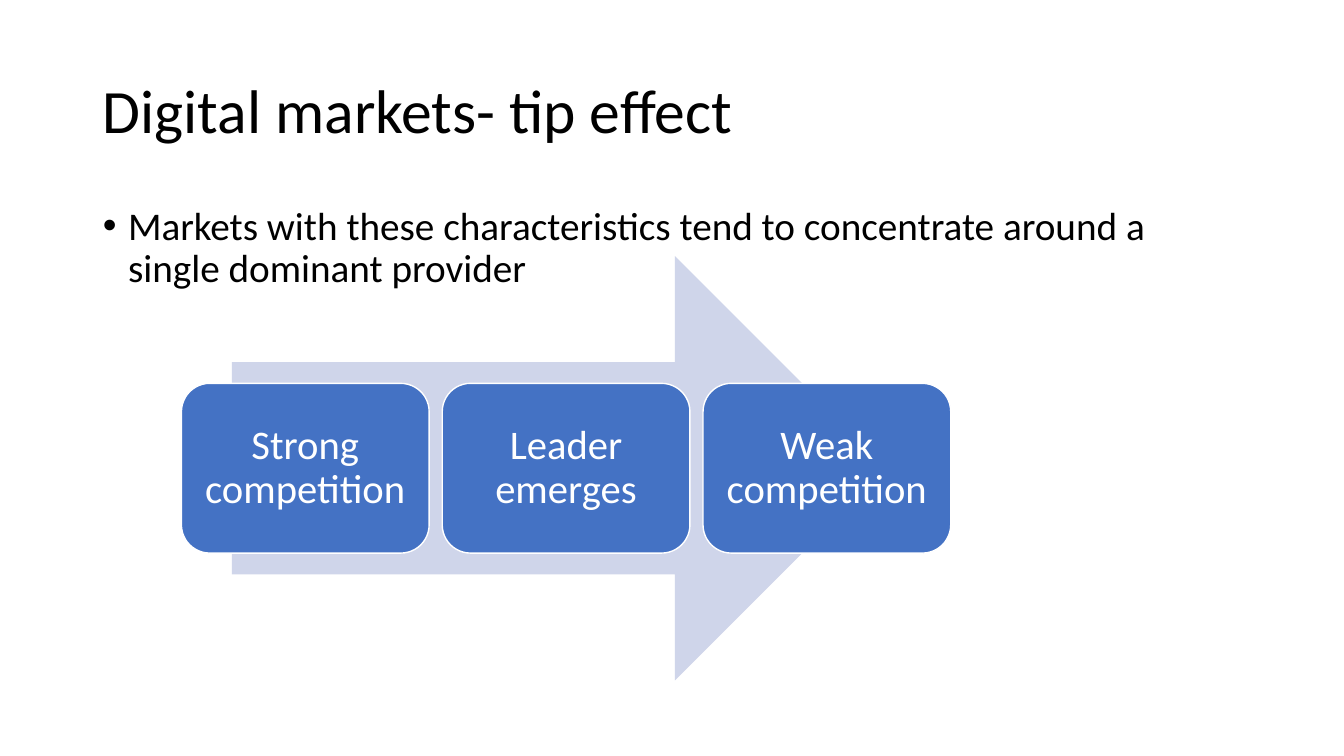
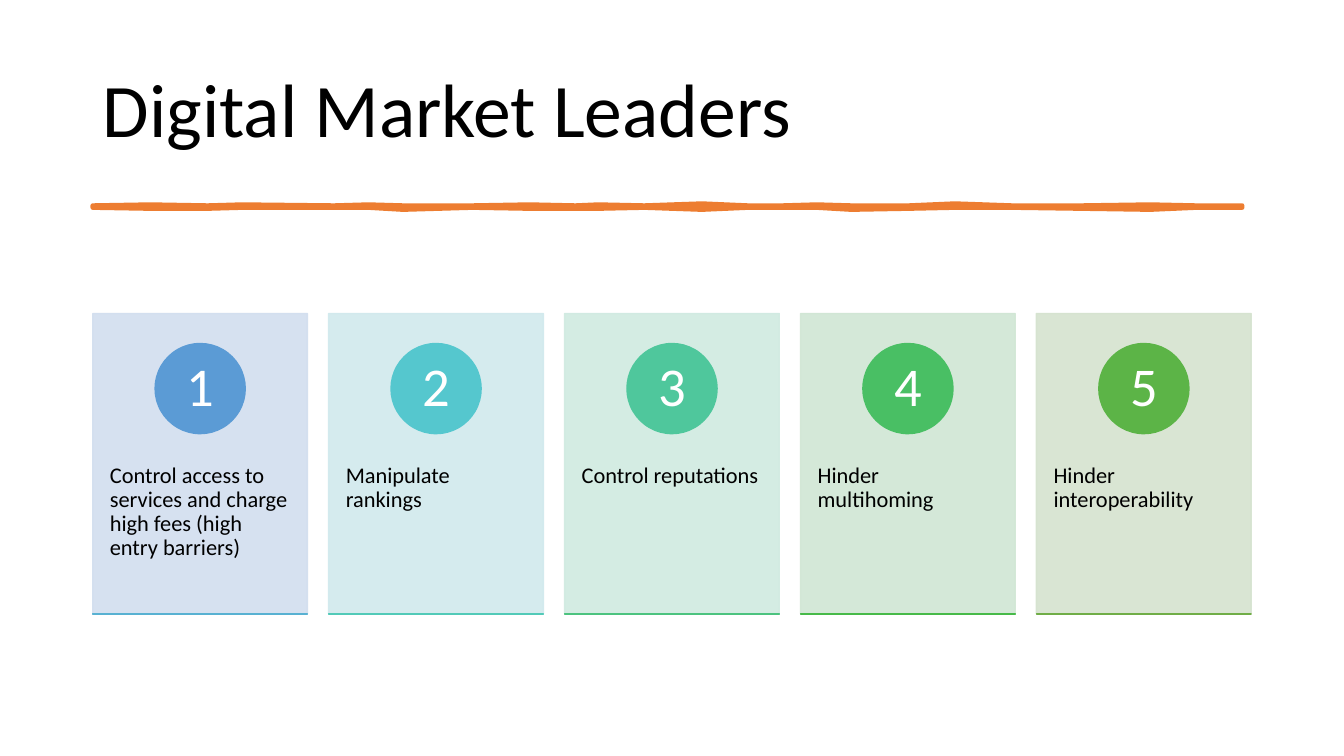
from lxml import etree
from pptx import Presentation
from pptx.dml.color import RGBColor
from pptx.enum.shapes import MSO_SHAPE as SHAPE
from pptx.enum.text import MSO_ANCHOR as ANCHOR, MSO_AUTO_SIZE as AUTO_SIZE, PP_ALIGN as ALIGN
from pptx.oxml.ns import qn
from pptx.util import Inches, Pt

FONT = "Calibri"
COLORS = {
    "page": "FFFFFF",
    "text": "000000",
    "arrow": "CFD5EA",
    "step": "4472C4",
    "rule": "ED7D31",
}
TITLE_LAYOUT, BODY_LAYOUT = 5, 1
TITLE_BOX = (0.92, 0.4, 11.5, 1.45)
BODY_BOX = (0.92, 2, 11.5, 4.76)
FLOW_BOX = (1.8, 2.54, 7.63, 4.21)
RULE_BOX = (0.92, 2.04, 11.4, 0.02)
CARDS_BOX = (0.92, 3.11, 11.49, 2.98)
STEPS = ["Strong competition", "Leader emerges", "Weak competition"]
CARDS = [
    ("Control access to services and charge high fees (high entry barriers)",
     "D2DEEF", "5B9BD5", "58B1D2"),
    ("Manipulate rankings", "D1E9ED", "55C7CE", "52CAB8"),
    ("Control reputations", "D0EAE1", "4FC79C", "4CC37F"),
    ("Hinder multihoming", "D0E6D4", "49BF64", "47BA49"),
    ("Hinder interoperability", "D5E3CF", "5CB447", "70AD47"),
]
BRUSH_KNOTS = [
    (0, 0, 0), (0.05, 0.01, 0.01), (0.1, 0, 0.01), (0.13, 0.01, 0),
    (0.21, 0, 0), (0.24, 0.01, 0), (0.27, 0, 0.02), (0.33, 0, 0),
    (0.38, 0.01, 0.01), (0.42, 0, 0.01), (0.44, 0.01, 0.01), (0.48, 0, 0),
    (0.53, 0.02, 0.02), (0.57, 0, 0), (0.6, 0, 0), (0.63, 0.01, 0),
    (0.66, 0, 0.02), (0.71, 0, 0.01), (0.75, 0.02, 0), (0.8, 0, 0),
    (0.86, 0, 0.01), (0.92, 0.01, 0.02), (0.96, 0, 0), (1, 0, 0),
]


def rgb(value):
    """Turn a hex string into a colour."""
    return RGBColor.from_string(value)


def inches(*lengths):
    """Turn numbers into inch lengths."""
    return [Inches(length) for length in lengths]


def write(shape, text, size, color, align=ALIGN.LEFT, anchor=ANCHOR.MIDDLE,
          insets=(0.1, 0.05, 0.1, 0.05)):
    """Set one formatted paragraph in a shape and return it."""
    frame = shape.text_frame
    frame.word_wrap = True
    frame.auto_size = AUTO_SIZE.NONE
    frame.vertical_anchor = anchor
    frame.margin_left, frame.margin_top, frame.margin_right, frame.margin_bottom = inches(*insets)
    para = frame.paragraphs[0]
    para.alignment = align
    para.line_spacing = 0.9
    para.space_before = Pt(0)
    span = para.add_run()
    span.text = text
    span.font.name, span.font.size = FONT, Pt(size)
    span.font.color.rgb = rgb(color)
    return para


def paint(shape, fill, line=None, width=1):
    """Give a shape a flat fill and an optional outline."""
    shape.shadow.inherit = False
    shape.fill.solid()
    shape.fill.fore_color.rgb = rgb(fill)
    if line:
        shape.line.color.rgb = rgb(line)
        shape.line.width = Pt(width)
    else:
        shape.line.fill.background()


def add_block(page, kind, box, fill, line=None, alpha=None):
    """Add a flat preset shape, with an optional outline and opacity."""
    shape = page.shapes.add_shape(kind, *inches(*box))
    paint(shape, fill, line)
    if alpha:
        for color in shape._element.spPr.iter(qn("a:srgbClr")):
            etree.SubElement(color, qn("a:alpha")).set("val", str(alpha * 1000))
    return shape


def place(shape, box):
    """Move a placeholder to a box."""
    shape.left, shape.top, shape.width, shape.height = inches(*box)


def add_page(deck, layout, title, size):
    """Add a slide with its title in the shared style."""
    page = deck.slides.add_slide(deck.slide_layouts[layout])
    page.background.fill.solid()
    page.background.fill.fore_color.rgb = rgb(COLORS["page"])
    place(page.shapes.title, TITLE_BOX)
    write(page.shapes.title, title, size, COLORS["text"])
    return page


def fill_body(page, box, text):
    """Place the bulleted body text."""
    body = page.placeholders[1]
    place(body, box)
    para = write(body, text, 28, COLORS["text"], anchor=ANCHOR.TOP)
    para.space_before = Pt(10)
    props = para._p.get_or_add_pPr()
    props.set("marL", str(Inches(0.25)))
    props.set("indent", str(Inches(-0.25)))
    etree.SubElement(props, qn("a:buFont")).set("typeface", "Arial")
    etree.SubElement(props, qn("a:buChar")).set("char", "•")


def draw_flow(page, box, steps):
    """Draw equal steps in a row over a wide arrow."""
    left, top, width, height = box
    gap = 0.13
    step_width = (width - gap * (len(steps) - 1)) / len(steps)
    add_block(page, SHAPE.RIGHT_ARROW, (left + 0.5, top, 6.5, height), COLORS["arrow"])
    for index, text in enumerate(steps):
        step = add_block(page, SHAPE.ROUNDED_RECTANGLE,
                         (left + index * (step_width + gap), top + height * 0.3,
                          step_width, height * 0.4),
                         COLORS["step"], COLORS["page"])
        write(step, text, 29, COLORS["page"], ALIGN.CENTER, insets=(0.12,) * 4)


def draw_rule(page, box):
    """Draw the uneven brush stroke below the title."""
    left, top, width, height = box
    upper = [(left + share * width, top - rise) for share, rise, _ in BRUSH_KNOTS]
    lower = [(left + share * width, top + height + drop) for share, _, drop in BRUSH_KNOTS]
    points = [tuple(inches(*point)) for point in upper + lower[::-1]]
    builder = page.shapes.build_freeform(*points[0])
    builder.add_line_segments(points[1:], close=True)
    stroke = builder.convert_to_shape()
    paint(stroke, COLORS["rule"], COLORS["rule"], 3.25)
    etree.SubElement(stroke.line._get_or_add_ln(), qn("a:round"))


def draw_card(page, box, number, text, tint, badge_color, base_color):
    """Draw a tinted card with a numbered badge and a base line."""
    left, top, width, height = box
    card = add_block(page, SHAPE.RECTANGLE, box, tint, tint, alpha=90)
    write(card, text, 16, COLORS["text"], anchor=ANCHOR.TOP,
          insets=(0.17, height / 2, 0.17, 0.36))
    size = height * 0.3
    badge = add_block(page, SHAPE.OVAL,
                      (left + (width - size) / 2, top + height * 0.1, size, size),
                      badge_color, badge_color)
    write(badge, str(number), 39, COLORS["page"], ALIGN.CENTER,
          insets=(0.07, 0.01, 0.07, 0.01))
    add_block(page, SHAPE.RECTANGLE, (left, top + height, width, 0), base_color, base_color)


def draw_cards(page, box, cards):
    """Spread numbered cards evenly over a box."""
    left, top, width, height = box
    gap = 0.21
    card_width = (width - gap * (len(cards) - 1)) / len(cards)
    for index, card in enumerate(cards):
        draw_card(page, (left + index * (card_width + gap), top, card_width, height),
                  index + 1, *card)


def build_tip_effect(deck):
    """Build the slide on the tip effect."""
    page = add_page(deck, BODY_LAYOUT, "Digital markets- tip effect", 44)
    fill_body(page, BODY_BOX, "Markets with these characteristics tend to concentrate "
                              "around a single dominant provider")
    draw_flow(page, FLOW_BOX, STEPS)


def build_leaders(deck):
    """Build the slide on market leaders."""
    page = add_page(deck, TITLE_LAYOUT, "Digital Market Leaders", 54)
    draw_rule(page, RULE_BOX)
    draw_cards(page, CARDS_BOX, CARDS)


def main():
    """Build and save the deck."""
    deck = Presentation()
    deck.slide_width, deck.slide_height = inches(13.33, 7.5)
    build_tip_effect(deck)
    build_leaders(deck)
    deck.save("out.pptx")


if __name__ == "__main__":
    main()
